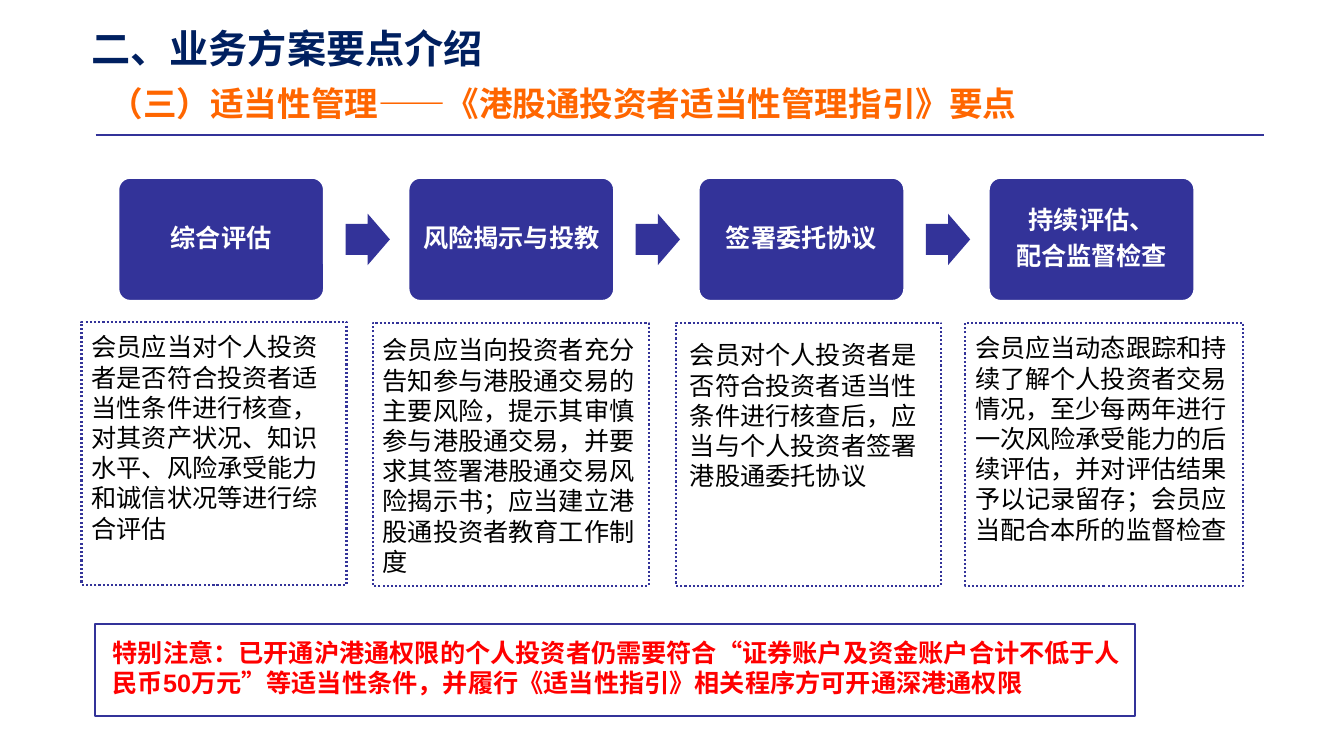
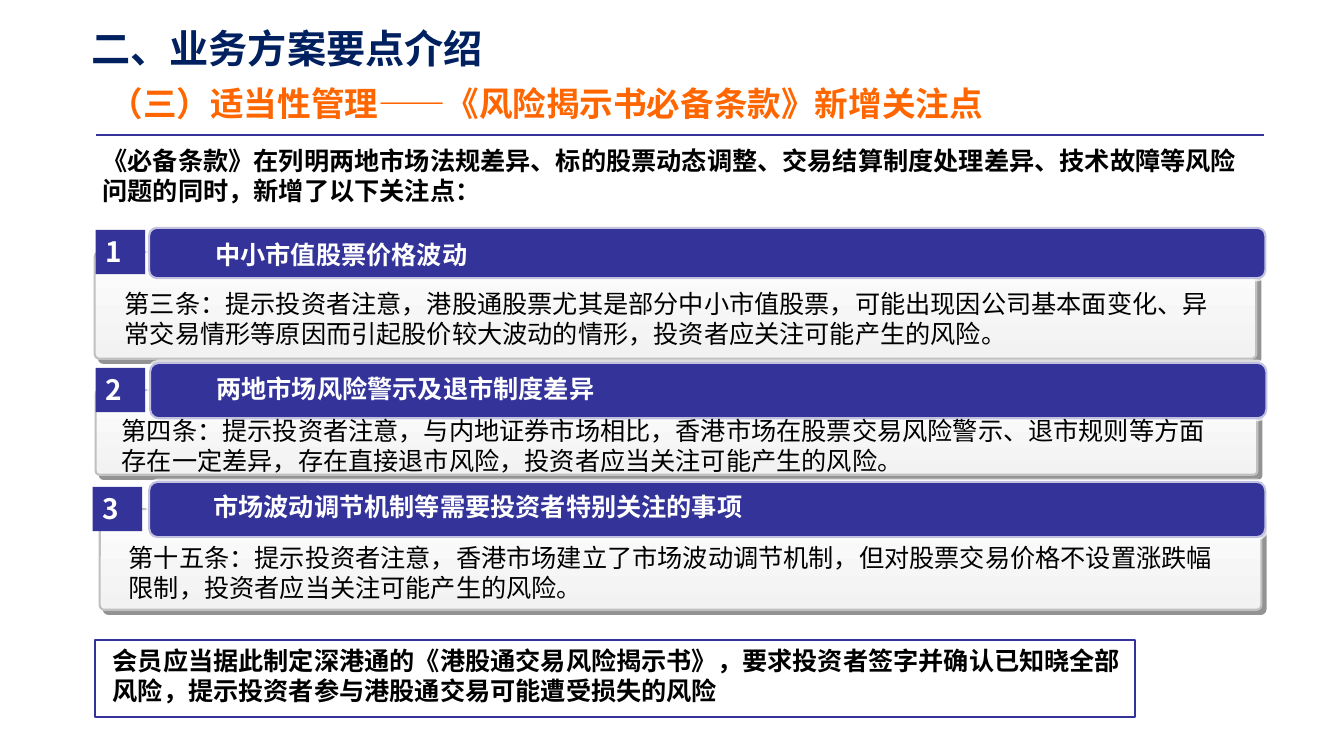
from dataclasses import dataclass
from typing import Any

from lxml import etree
from pptx import Presentation
from pptx.dml.color import RGBColor
from pptx.enum.dml import MSO_LINE
from pptx.enum.shapes import MSO_CONNECTOR, MSO_SHAPE
from pptx.enum.text import MSO_ANCHOR, PP_ALIGN
from pptx.oxml.ns import qn
from pptx.util import Pt

PX = 9144
RECT = MSO_SHAPE.RECTANGLE
ROUNDED = MSO_SHAPE.ROUNDED_RECTANGLE
ARROW = MSO_SHAPE.RIGHT_ARROW
STRAIGHT = MSO_CONNECTOR.STRAIGHT
DOTTED = MSO_LINE.ROUND_DOT
TOP, MIDDLE = MSO_ANCHOR.TOP, MSO_ANCHOR.MIDDLE
LEFT, CENTER = PP_ALIGN.LEFT, PP_ALIGN.CENTER

CJK, LATIN = "Noto Sans CJK SC", "Arial"
INDIGO, NAVY, ORANGE = "333399", "002060", "FF6600"
WHITE, BLACK, RED = "FFFFFF", "000000", "FF0000"
SILVER, SHADE = "C0C0C0", "292929"
CARD_TOP, CARD_BOTTOM = "FDFDFD", "F2F2F2"

FRAME = {"margin_left": 10 * PX, "margin_right": 10 * PX,
         "margin_top": 5 * PX, "margin_bottom": 5 * PX,
         "vertical_anchor": TOP, "word_wrap": True}
STEP_FRAME = {**FRAME, "vertical_anchor": MIDDLE,
              "margin_left": 11 * PX, "margin_right": 11 * PX}
STEP_PARAGRAPH = {"alignment": CENTER, "line_spacing": 0.9, "space_after": Pt(6.3)}


@dataclass(frozen=True)
class Box:
    left: int
    top: int
    width: int
    height: int

    def emu(self) -> list[int]:
        return [side * PX for side in (self.left, self.top, self.width, self.height)]


@dataclass(frozen=True)
class Style:
    size: int
    color: str
    bold: bool = False
    font: str = LATIN


@dataclass(frozen=True)
class Outline:
    color: str
    width: float
    dash: Any = None


@dataclass(frozen=True)
class Step:
    heading: str
    frame: Box
    detail: str
    detail_box: Box


@dataclass(frozen=True)
class Clause:
    number: str
    heading: str
    body: str
    card: Box
    bar: Box
    heading_at: tuple[int, int]
    body_at: tuple[int, int]
    badge_at: tuple[int, int]


TITLE = Style(28, NAVY, True, CJK)
SUBTITLE = Style(24, ORANGE, True, CJK)
STEP_HEADING = Style(18, WHITE, True)
DETAIL = Style(18, BLACK)
WARNING = Style(18, RED, True)
STRONG = Style(18, BLACK, True)
CLAUSE_HEADING = Style(18, WHITE, True, CJK)
CLAUSE_BODY = Style(18, BLACK, False, CJK)
BADGE = Style(20, WHITE, True, CJK)

STEPS = [
    Step("综合评估", Box(81, 319, 263, 261),
         "会员应当对个人投资者是否符合投资者适当性条件进行核查，对其资产状况、知识水平、风险承受能力和诚信状况等进行综合评估",
         Box(81, 324, 263, 222)),
    Step("风险揭示与投教", Box(370, 320, 274, 261),
         "会员应当向投资者充分告知参与港股通交易的主要风险，提示其审慎参与港股通交易，并要求其签署港股通交易风险揭示书；应当建立港股通投资者教育工作制度",
         Box(370, 327, 274, 252)),
    Step("签署委托协议", Box(671, 320, 263, 261),
         "会员对个人投资者是否符合投资者适当性条件进行核查后，应当与个人投资者签署港股通委托协议",
         Box(675, 332, 252, 162)),
    Step("持续评估、\n配合监督检查", Box(958, 320, 276, 261),
         "会员应当动态跟踪和持续了解个人投资者交易情况，至少每两年进行一次风险承受能力的后续评估，并对评估结果予以记录留存；会员应当配合本所的监督检查",
         Box(958, 325, 276, 222)),
]
STEP_LEFT, STEP_PITCH, ARROW_OFFSET = 117, 288, 226

CLAUSES = [
    Clause("1", "中小市值股票价格波动",
           "第三条：提示投资者注意，港股通股票尤其是部分中小市值股票，可能出现因公司基本面变化、异常交易情形等原因而引起股价较大波动的情形，投资者应关注可能产生的风险。",
           Box(94, 250, 1153, 106), Box(147, 225, 1110, 52),
           (204, 233), (114, 281), (95, 228)),
    Clause("2", "两地市场风险警示及退市制度差异",
           "第四条：提示投资者注意，与内地证券市场相比，香港市场在股票交易风险警示、退市规则等方面存在一定差异，存在直接退市风险，投资者应当关注可能产生的风险。",
           Box(95, 387, 1153, 84), Box(148, 359, 1110, 57),
           (205, 365), (111, 407), (95, 365)),
    Clause("3", "市场波动调节机制等需要投资者特别关注的事项",
           "第十五条：提示投资者注意，香港市场建立了市场波动调节机制，但对股票交易价格不设置涨跌幅限制，投资者应当关注可能产生的风险。",
           Box(99, 505, 1153, 100), Box(147, 477, 1110, 57),
           (202, 483), (118, 533), (92, 483)),
]


def rgb(value: str) -> RGBColor:
    return RGBColor.from_string(value)


def apply(target: Any, values: dict[str, Any]) -> None:
    for key, value in values.items():
        setattr(target, key, value)


def write(shape: Any, text: str, style: Style, frame: dict = FRAME,
          layout: dict | None = None) -> None:
    apply(shape.text_frame, frame)
    shape.text_frame.text = text
    for paragraph in shape.text_frame.paragraphs:
        apply(paragraph, layout or {"alignment": LEFT})
        for run in paragraph.runs:
            apply(run.font, {"size": Pt(style.size), "bold": style.bold, "name": style.font})
            run.font.color.rgb = rgb(style.color)
            properties = run.font.element if hasattr(run.font, "element") else run._r.rPr
            properties.set("lang", "zh-CN")
            etree.SubElement(properties, qn("a:ea"), typeface=CJK)


def add_text(slide: Any, box: Box, text: str, style: Style) -> None:
    write(slide.shapes.add_textbox(*box.emu()), text, style)


def add_block(slide: Any, kind: Any, box: Box, fill: str | None = None,
              outline: Outline | None = None, adjustments: tuple = ()) -> Any:
    shape = slide.shapes.add_shape(kind, *box.emu())
    shape.shadow.inherit = False
    for index, value in enumerate(adjustments):
        shape.adjustments[index] = value
    if fill:
        shape.fill.solid()
        shape.fill.fore_color.rgb = rgb(fill)
    else:
        shape.fill.background()
    if outline:
        shape.line.color.rgb = rgb(outline.color)
        apply(shape.line, {"width": Pt(outline.width), "dash_style": outline.dash})
    else:
        shape.line.fill.background()
    return shape


def set_alpha(color: Any, percent: int) -> None:
    etree.SubElement(color, qn("a:alpha"), val=str(percent * 1000))


def add_card(slide: Any, box: Box) -> None:
    card = add_block(slide, ROUNDED, box, CARD_TOP, Outline(SILVER, 1.5), (0.046,))
    card.fill.gradient()
    card.fill.gradient_angle = 270
    for stop, color in zip(card.fill.gradient_stops, (CARD_TOP, CARD_BOTTOM)):
        stop.color.rgb = rgb(color)
    effects = card.element.spPr.find(qn("a:effectLst"))
    shadow = etree.SubElement(effects, qn("a:outerShdw"), blurRad="0",
                              dist=str(Pt(4.2)), dir=str(45 * 60000),
                              algn="ctr", rotWithShape="0")
    set_alpha(etree.SubElement(shadow, qn("a:srgbClr"), val=SHADE), 50)


def add_bar(slide: Any, box: Box) -> None:
    bar = add_block(slide, ROUNDED, box, INDIGO, Outline(WHITE, 3), (0.167,))
    line = bar.element.spPr.find(qn("a:ln"))
    set_alpha(next(line.iter(qn("a:srgbClr"))), 70)


def add_page(deck: Any, subtitle: str) -> Any:
    slide = deck.slides.add_slide(deck.slide_layouts[6])
    add_text(slide, Box(81, 19, 1059, 57), "二、业务方案要点介绍", TITLE)
    add_text(slide, Box(99, 77, 1154, 50), subtitle, SUBTITLE)
    rule = slide.shapes.add_connector(STRAIGHT, 95 * PX, 134 * PX, 1255 * PX, 134 * PX)
    rule.line.color.rgb = rgb(INDIGO)
    rule.line.width = Pt(2)
    etree.SubElement(rule.element.spPr, qn("a:effectLst"))
    return slide


def add_notice(slide: Any, frame: Box, text_top: int, text: str, style: Style) -> None:
    add_text(slide, Box(102, text_top, 1030, 71), text, style)
    add_block(slide, RECT, frame, outline=Outline(INDIGO, 1.5))


def add_step(slide: Any, index: int, step: Step) -> None:
    left = STEP_LEFT + index * STEP_PITCH
    heading = add_block(slide, ROUNDED, Box(left, 176, 205, 123), INDIGO,
                        Outline(WHITE, 2), (0.1,))
    write(heading, step.heading, STEP_HEADING, STEP_FRAME, STEP_PARAGRAPH)
    if index < len(STEPS) - 1:
        add_block(slide, ARROW, Box(left + ARROW_OFFSET, 212, 44, 51), INDIGO,
                  adjustments=(0.6, 0.5))
    add_text(slide, step.detail_box, step.detail, DETAIL)
    add_block(slide, RECT, step.frame, outline=Outline(INDIGO, 1.5, DOTTED))


def add_clause(slide: Any, clause: Clause) -> None:
    add_card(slide, clause.card)
    add_bar(slide, clause.bar)
    add_text(slide, Box(*clause.heading_at, 1004, 40), clause.heading, CLAUSE_HEADING)
    add_text(slide, Box(*clause.body_at, 1104, 71), clause.body, CLAUSE_BODY)
    badge = add_block(slide, RECT, Box(*clause.badge_at, 49, 44), INDIGO)
    write(badge, clause.number, BADGE)


def build_guideline(deck: Any) -> None:
    slide = add_page(deck, "（三）适当性管理——《港股通投资者适当性管理指引》要点")
    for index, step in enumerate(STEPS):
        add_step(slide, index, step)
    add_notice(slide, Box(94, 619, 1033, 91), 627,
               "特别注意：已开通沪港通权限的个人投资者仍需要符合“证券账户及资金账户合计不低于人民币50万元”等适当性条件，并履行《适当性指引》相关程序方可开通深港通权限",
               WARNING)


def build_clauses(deck: Any) -> None:
    slide = add_page(deck, "（三）适当性管理——《风险揭示书必备条款》新增关注点")
    add_text(slide, Box(92, 139, 1157, 71),
             "《必备条款》在列明两地市场法规差异、标的股票动态调整、交易结算制度处理差异、技术故障等风险问题的同时，新增了以下关注点：",
             STRONG)
    for clause in CLAUSES:
        add_clause(slide, clause)
    add_notice(slide, Box(94, 635, 1033, 76), 635,
               "会员应当据此制定深港通的《港股通交易风险揭示书》，要求投资者签字并确认已知晓全部风险，提示投资者参与港股通交易可能遭受损失的风险",
               STRONG)


def main() -> None:
    deck = Presentation()
    apply(deck, {"slide_width": 1334 * PX, "slide_height": 750 * PX})
    build_guideline(deck)
    build_clauses(deck)
    deck.save("out.pptx")


if __name__ == "__main__":
    main()
